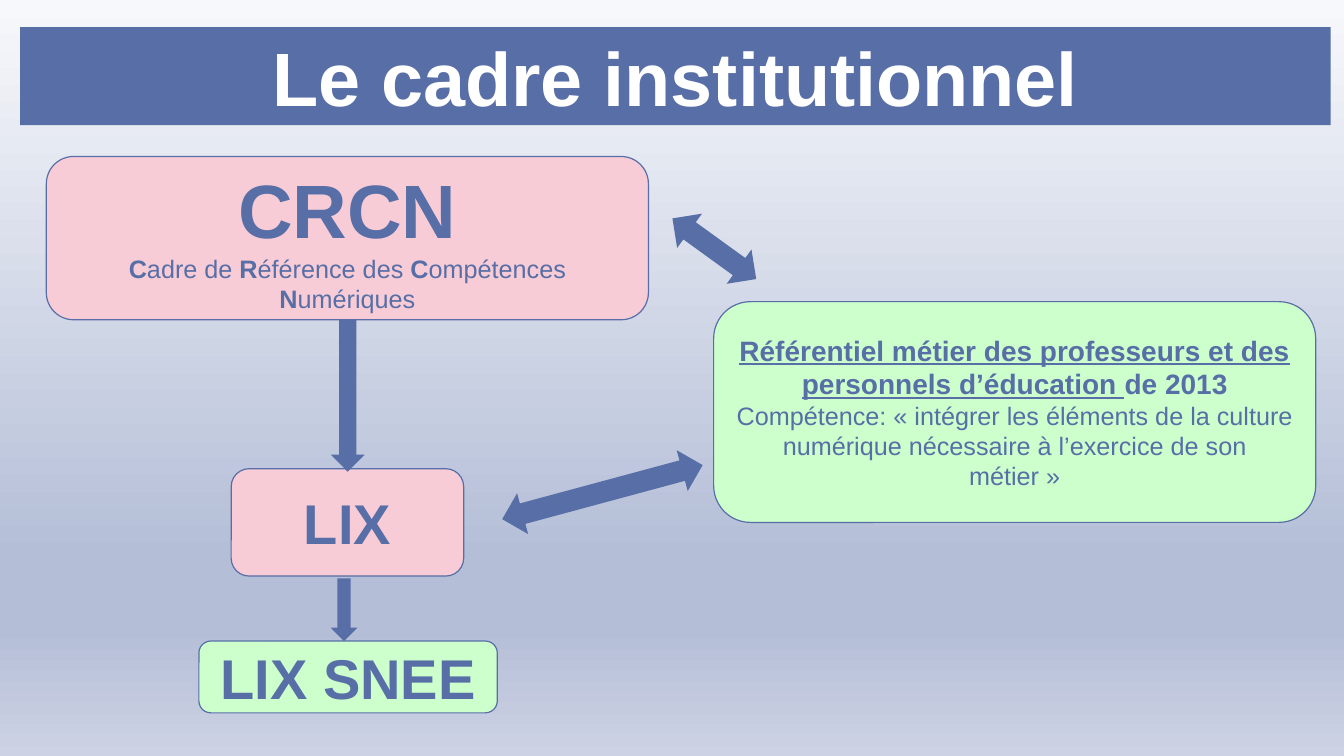
from copy import deepcopy

from pptx import Presentation
from pptx.dml.color import RGBColor
from pptx.enum.shapes import MSO_SHAPE as SHAPE
from pptx.enum.text import MSO_ANCHOR, MSO_AUTO_SIZE, PP_ALIGN
from pptx.oxml.ns import qn
from pptx.util import Inches, Pt

WIDTH, HEIGHT = Inches(13.33), Inches(7.5)
FONT = "Arial"
NBSP = chr(160)
COLORS = {
    "blue": "586EA6",
    "pink": "F7CCD6",
    "green": "CCFFCC",
    "white": "FFFFFF",
}
BACKGROUND = [(0, "F7F8FB"), (0.74, "B4BED7"), (0.83, "B4BED7"), (1, "CDD3E4")]


def rgb(name):
    return RGBColor.from_string(COLORS[name])


def frame(left, top, width, height):
    """Turn percentages of the slide's size into lengths."""
    return [int(share * side / 100) for share, side in
            zip((left, top, width, height), (WIDTH, HEIGHT) * 2)]


def paint_background(slide):
    fill = slide.background.fill
    fill.gradient()
    fill.gradient_angle = 270
    stop_list = next(slide.element.iter(qn("a:gsLst")))
    while len(stop_list) < len(BACKGROUND):
        stop_list.append(deepcopy(stop_list[0]))
    for stop, (position, color) in zip(fill.gradient_stops, BACKGROUND):
        stop.position = position
        stop.color.rgb = RGBColor.from_string(color)


def format_paragraph(p, size, color="blue", bold=True):
    p.alignment = PP_ALIGN.CENTER
    p.font.name = FONT
    p.font.size = Pt(size)
    p.font.bold = bold
    p.font.color.rgb = rgb(color)


def add_title(slide, text, box):
    sp = slide.shapes.title
    sp.left, sp.top, sp.width, sp.height = frame(*box)
    sp.fill.solid()
    sp.fill.fore_color.rgb = rgb("blue")
    tf = sp.text_frame
    tf.text = text
    tf.auto_size = MSO_AUTO_SIZE.NONE
    tf.vertical_anchor = MSO_ANCHOR.MIDDLE
    format_paragraph(tf.paragraphs[0], 54, "white")


def add_filled(slide, kind, box, color):
    sp = slide.shapes.add_shape(kind, *frame(*box))
    sp.shadow.inherit = False
    sp.fill.solid()
    sp.fill.fore_color.rgb = rgb(color)
    return sp


def add_arrow(slide, kind, box, rotation=0):
    sp = add_filled(slide, kind, box, "blue")
    sp.line.fill.background()
    sp.rotation = rotation


def add_card(slide, box, color, *paragraphs):
    """Each paragraph is a size and its runs; a run is a text and its marks (b, u)."""
    sp = add_filled(slide, SHAPE.ROUNDED_RECTANGLE, box, color)
    sp.line.color.rgb = rgb("blue")
    sp.line.width = Pt(0.85)
    tf = sp.text_frame
    tf.word_wrap = True
    tf.vertical_anchor = MSO_ANCHOR.MIDDLE
    for i, (size, runs) in enumerate(paragraphs):
        p = tf.add_paragraph() if i else tf.paragraphs[0]
        format_paragraph(p, size, bold=False)
        for text, marks in runs:
            r = p.add_run()
            r.text = text
            r.font.bold = "b" in marks
            r.font.underline = "u" in marks


def main():
    prs = Presentation()
    prs.slide_width, prs.slide_height = WIDTH, HEIGHT
    slide = prs.slides.add_slide(prs.slide_layouts[5])
    paint_background(slide)
    add_title(slide, "Le cadre institutionnel", (1.5, 3.6, 97.5, 12.95))

    add_card(slide, (17.2, 62, 17.3, 14.2), "pink", (40, [("LIX", "b")]))
    add_card(slide, (14.8, 84.8, 22.2, 9.5), "green", (40, [("LIX SNEE", "b")]))
    add_arrow(slide, SHAPE.DOWN_ARROW, (24.6, 40.8, 2.55, 21.6))
    add_arrow(slide, SHAPE.DOWN_ARROW, (24.6, 76.5, 2, 8.3))

    words = ["Cadre de ", "Référence des ", "Compétences ", "Numériques"]
    acronym = [run for word in words for run in ((word[0], "b"), (word[1:], ""))]
    add_card(slide, (3.45, 20.7, 44.8, 21.6), "pink",
             (54, [("CRCN", "b")]), (18, acronym))
    add_card(slide, (53.1, 39.9, 44.8, 29.2), "green",
             (20, [("Référentiel métier des professeurs et des "
                    "personnels d’éducation ", "bu"), ("de 2013", "b")]),
             (18, [(f"Compétence: «{NBSP}intégrer les éléments de la culture "
                    f"numérique nécessaire à l’exercice de son métier{NBSP}»", "")]))

    add_arrow(slide, SHAPE.LEFT_RIGHT_ARROW, (49.3, 30.1, 7.7, 5.6), 35.9)
    add_arrow(slide, SHAPE.LEFT_RIGHT_ARROW, (37.1, 62.3, 15.45, 5.6), 344.9)
    prs.save("out.pptx")


if __name__ == "__main__":
    main()
